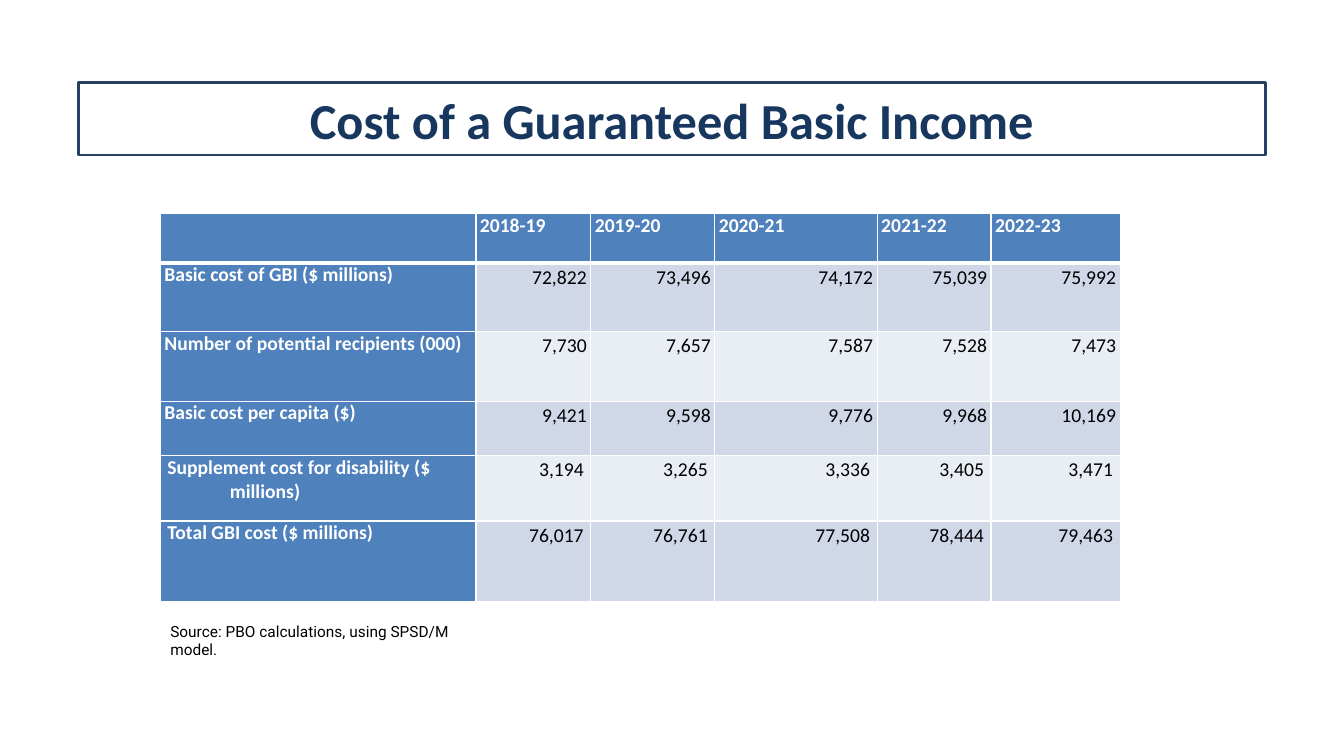
from lxml import etree
from pptx import Presentation, util as u
from pptx.dml.color import RGBColor
from pptx.enum import shapes, text
from pptx.oxml import ns

HUES = {"navy": "17375E", "edge": "254061", "blue": "4F81BD", "band": "D0D8E8",
        "pale": "E9EDF4", "white": "FFFFFF", "black": "000000"}
YEARS = ["2018-19", "2019-20", "2020-21", "2021-22", "2022-23"]
COSTS = [
    ("Basic cost of GBI ($ millions)", "72,822", "73,496", "74,172", "75,039", "75,992"),
    ("Number of potential recipients (000)", "7,730", "7,657", "7,587", "7,528", "7,473"),
    ("Basic cost per capita ($)", "9,421", "9,598", "9,776", "9,968", "10,169"),
    ("Supplement cost for disability ($ millions)", "3,194", "3,265", "3,336", "3,405", "3,471"),
    ("Total GBI cost ($ millions)", "76,017", "76,761", "77,508", "78,444", "79,463"),
]
WIDTHS = [3.13, 1.14, 1.23, 1.61, 1.13, 1.28]
HEIGHTS = [0.49, 0.68, 0.69, 0.54, 0.65, 0.8]


def write(frame, words, size=14, face="Calibri", hue="black", bold=False,
          align=text.PP_ALIGN.LEFT, lines=None, hang=0):
    para = frame.paragraphs[0]
    para.alignment = align
    para.line_spacing = lines
    if hang:
        props = para._p.get_or_add_pPr()
        props.set("marL", str(u.Inches(hang)))
        props.set("indent", str(-u.Inches(hang)))
    run = para.add_run()
    run.text = words
    run.font.size = u.Pt(size)
    run.font.name = face
    run.font.bold = bold
    run.font.color.rgb = RGBColor.from_string(HUES[hue])


def border(cell, side, width):
    line = etree.SubElement(cell._tc.get_or_add_tcPr(), ns.qn("a:ln" + side), w=str(u.Pt(width)))
    fill = etree.SubElement(line, ns.qn("a:solidFill"))
    etree.SubElement(fill, ns.qn("a:srgbClr"), val=HUES["white"])


deck = Presentation()
deck.slide_width = u.Inches(13.33)
deck.slide_height = u.Inches(7.5)
slide = deck.slides.add_slide(deck.slide_layouts[6])

title = slide.shapes.add_shape(shapes.MSO_SHAPE.RECTANGLE, u.Inches(0.78), u.Inches(0.82),
                               u.Inches(11.77), u.Inches(0.72))
title.shadow.inherit = False
title.fill.background()
title.line.color.rgb = RGBColor.from_string(HUES["edge"])
title.line.width = u.Pt(1.75)
title.text_frame.vertical_anchor = text.MSO_ANCHOR.MIDDLE
write(title.text_frame, "Cost of a Guaranteed Basic Income", size=36, hue="navy", bold=True,
      align=text.PP_ALIGN.CENTER)

rows = [("", *YEARS), *COSTS]
table = slide.shapes.add_table(len(rows), len(WIDTHS), u.Inches(1.59), u.Inches(2.12),
                               u.Inches(sum(WIDTHS)), u.Inches(sum(HEIGHTS))).table
for col, width in zip(table.columns, WIDTHS):
    col.width = u.Inches(width)
for row, height in zip(table.rows, HEIGHTS):
    row.height = u.Inches(height)

for r, row in enumerate(rows):
    for c, words in enumerate(row):
        cell = table.cell(r, c)
        head = r == 0 or c == 0
        cell.margin_left = cell.margin_right = u.Inches(0.07 if r > 3 else 0.04)
        cell.margin_top = cell.margin_bottom = 0
        for side in "LRTB":
            thick = (r == 0 and side == "B") or (r == 1 and side == "T")
            border(cell, side, 3 if thick else 1)
        cell.fill.solid()
        shade = "blue" if head else "band" if r % 2 else "pale"
        cell.fill.fore_color.rgb = RGBColor.from_string(HUES[shade])
        if head and words:
            write(cell.text_frame, words, hue="white", bold=True, hang=0.62)
        elif words:
            write(cell.text_frame, words, align=text.PP_ALIGN.RIGHT, lines=1.1)

note = slide.shapes.add_textbox(u.Inches(1.59), u.Inches(6.12), u.Inches(3.42), u.Inches(0.29))
note.text_frame.word_wrap = True
write(note.text_frame, "Source: PBO calculations, using SPSD/M model.", size=11, face="Roboto")

deck.save("out.pptx")
